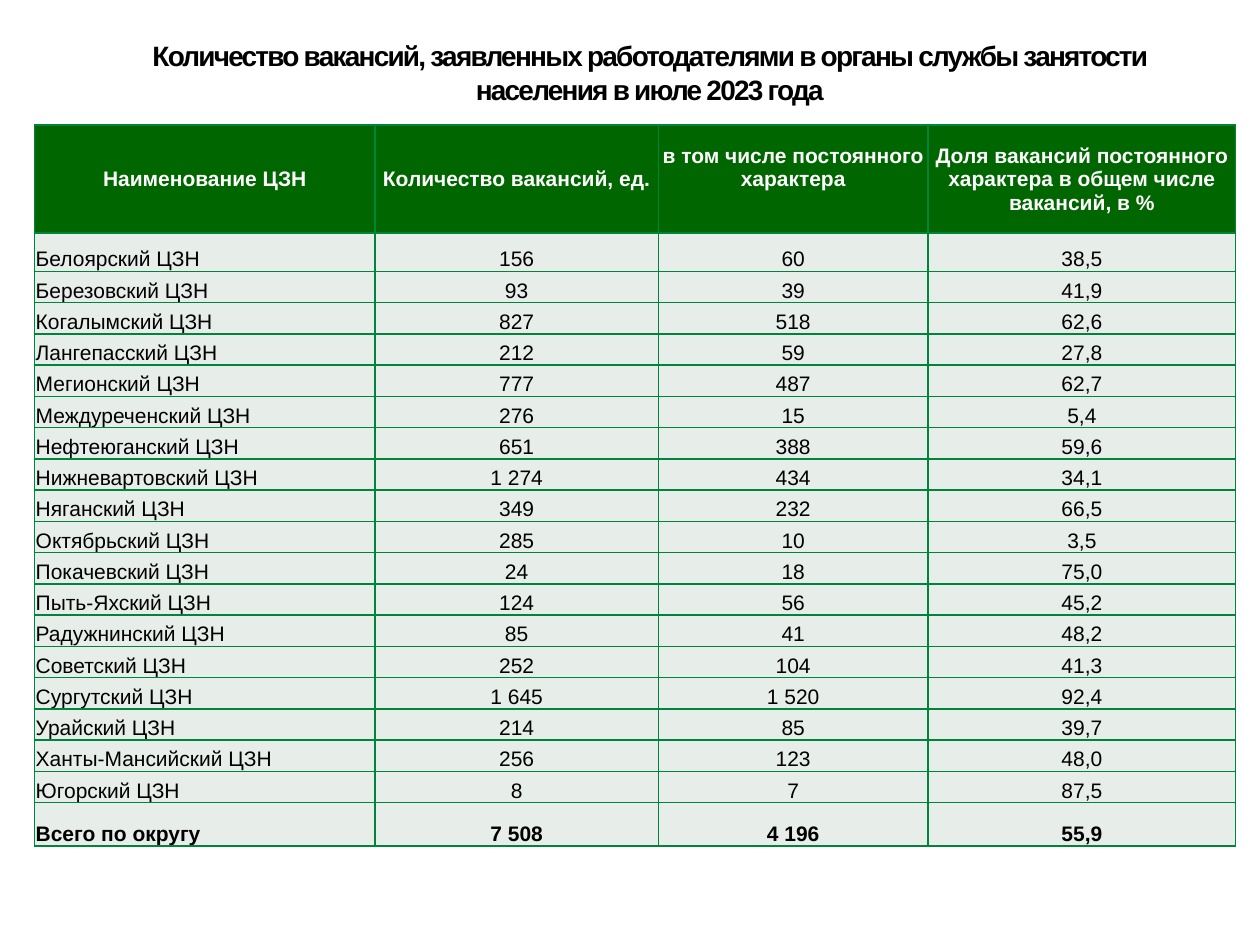
from lxml import etree
from pptx import Presentation
from pptx.dml.color import RGBColor
from pptx.enum.text import MSO_ANCHOR, PP_ALIGN
from pptx.oxml.ns import qn
from pptx.util import Cm, Pt

MIDDLE, BOTTOM = MSO_ANCHOR.MIDDLE, MSO_ANCHOR.BOTTOM
LEFT, CENTER = PP_ALIGN.LEFT, PP_ALIGN.CENTER

FONT = "Arial"
COLORS = {
    "text": "000000",
    "header_text": "FFFFFF",
    "header_fill": "006600",
    "body_fill": "E7EDE8",
    "border": "00843C",
}

TITLE = ("Количество вакансий, заявленных работодателями в органы службы занятости "
         "населения в июле 2023 года")
VACANCIES = [
    ("Наименование ЦЗН", "Количество вакансий, ед.", "в том числе постоянного характера",
     "Доля вакансий постоянного характера в общем числе вакансий, в %"),
    ("Белоярский ЦЗН", "156", "60", "38,5"),
    ("Березовский ЦЗН", "93", "39", "41,9"),
    ("Когалымский ЦЗН", "827", "518", "62,6"),
    ("Лангепасский ЦЗН", "212", "59", "27,8"),
    ("Мегионский ЦЗН", "777", "487", "62,7"),
    ("Междуреченский ЦЗН", "276", "15", "5,4"),
    ("Нефтеюганский ЦЗН", "651", "388", "59,6"),
    ("Нижневартовский ЦЗН", "1 274", "434", "34,1"),
    ("Няганский ЦЗН", "349", "232", "66,5"),
    ("Октябрьский ЦЗН", "285", "10", "3,5"),
    ("Покачевский ЦЗН", "24", "18", "75,0"),
    ("Пыть-Яхский ЦЗН", "124", "56", "45,2"),
    ("Радужнинский ЦЗН", "85", "41", "48,2"),
    ("Советский ЦЗН", "252", "104", "41,3"),
    ("Сургутский ЦЗН", "1 645", "1 520", "92,4"),
    ("Урайский ЦЗН", "214", "85", "39,7"),
    ("Ханты-Мансийский ЦЗН", "256", "123", "48,0"),
    ("Югорский ЦЗН", "8", "7", "87,5"),
    ("Всего по округу", "7 508", "4 196", "55,9"),
]
COLUMN_WIDTHS = [6.86, 5.71, 5.44, 6.2]
ROW_HEIGHTS = [2.18, 0.77] + [0.63] * (len(VACANCIES) - 3) + [0.87]


def style_text(paragraph, size, color, bold, alignment):
    paragraph.alignment = alignment
    for run in paragraph.runs:
        run.font.name = FONT
        run.font.size = Pt(size)
        run.font.bold = bold
        run.font.color.rgb = RGBColor.from_string(COLORS[color])


def add_borders(cell):
    properties = cell._tc.get_or_add_tcPr()
    for side in ("lnL", "lnR", "lnT", "lnB"):
        line = etree.SubElement(properties, qn(f"a:{side}"), w=str(Pt(1)))
        fill = etree.SubElement(line, qn("a:solidFill"))
        etree.SubElement(fill, qn("a:srgbClr"), val=COLORS["border"])


prs = Presentation()
prs.slide_width, prs.slide_height = Cm(25.4), Cm(19.05)
slide = prs.slides.add_slide(prs.slide_layouts[6])

title = slide.shapes.add_textbox(Cm(1.9), Cm(0.66), Cm(22.4), Cm(1.6)).text_frame
title.word_wrap = True
title.vertical_anchor = MIDDLE
title.margin_top = title.margin_bottom = 0
title.text = TITLE
style_text(title.paragraphs[0], 16, "text", True, CENTER)
title.paragraphs[0].runs[0].font._element.set("spc", "-100")

table = slide.shapes.add_table(
    len(VACANCIES), len(COLUMN_WIDTHS), Cm(0.7), Cm(2.52),
    Cm(sum(COLUMN_WIDTHS)), Cm(sum(ROW_HEIGHTS))).table
table.horz_banding = False
for column, width in zip(table.columns, COLUMN_WIDTHS):
    column.width = Cm(width)
for row, height in zip(table.rows, ROW_HEIGHTS):
    row.height = Cm(height)

last_row = len(VACANCIES) - 1
for r, values in enumerate(VACANCIES):
    is_header = r == 0
    for c, value in enumerate(values):
        cell = table.cell(r, c)
        cell.text = value
        cell.margin_left = cell.margin_right = cell.margin_top = Cm(0.02)
        cell.margin_bottom = 0
        cell.vertical_anchor = MIDDLE if is_header else BOTTOM
        style_text(cell.text_frame.paragraphs[0], 12,
                   "header_text" if is_header else "text",
                   r in (0, last_row),
                   LEFT if c == 0 and not is_header else CENTER)
        add_borders(cell)
        cell.fill.solid()
        cell.fill.fore_color.rgb = RGBColor.from_string(
            COLORS["header_fill" if is_header else "body_fill"])

# The two-line heading starts level with the three-line one beside it
table.cell(0, 2).margin_bottom = Cm(0.48)

prs.save("out.pptx")
